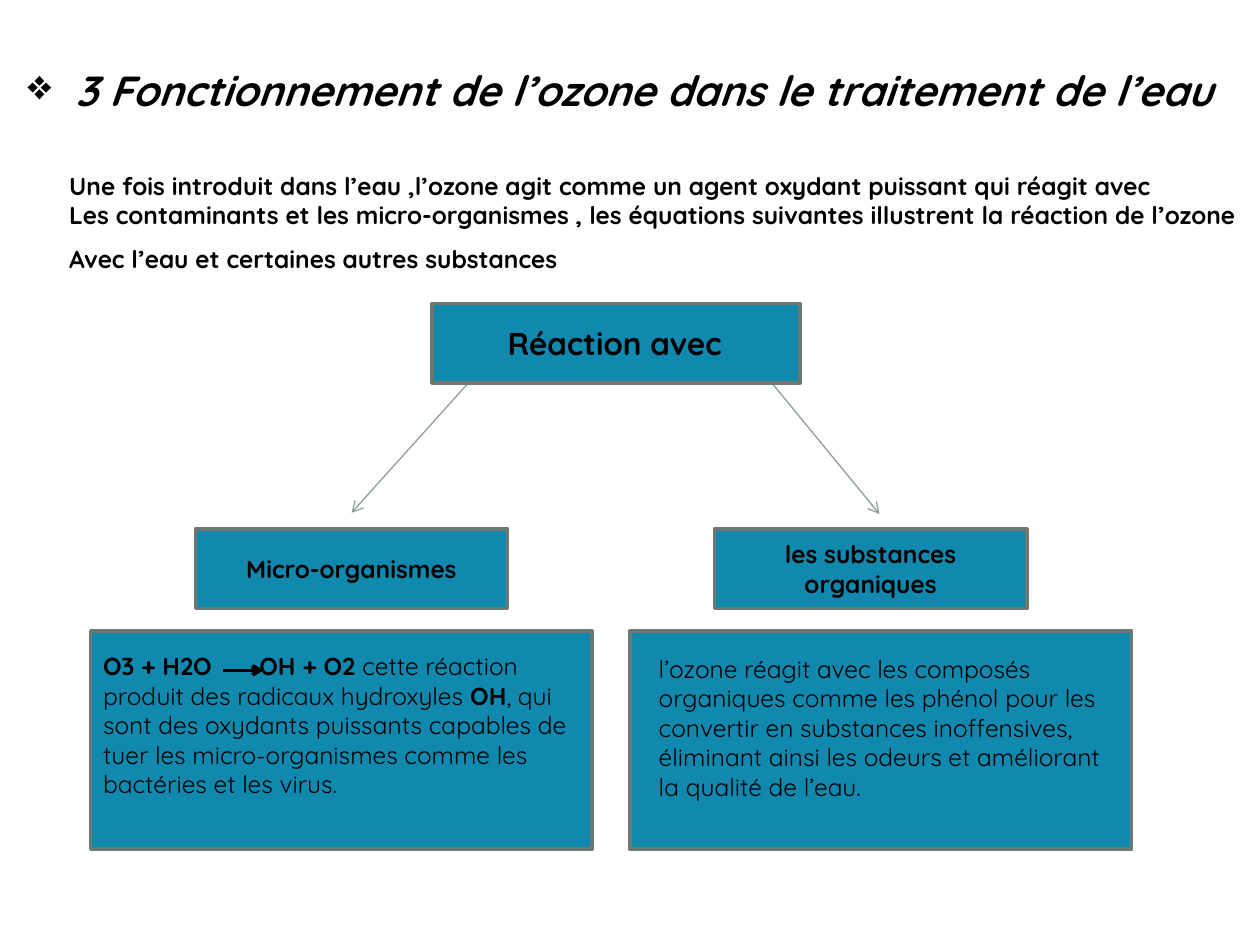
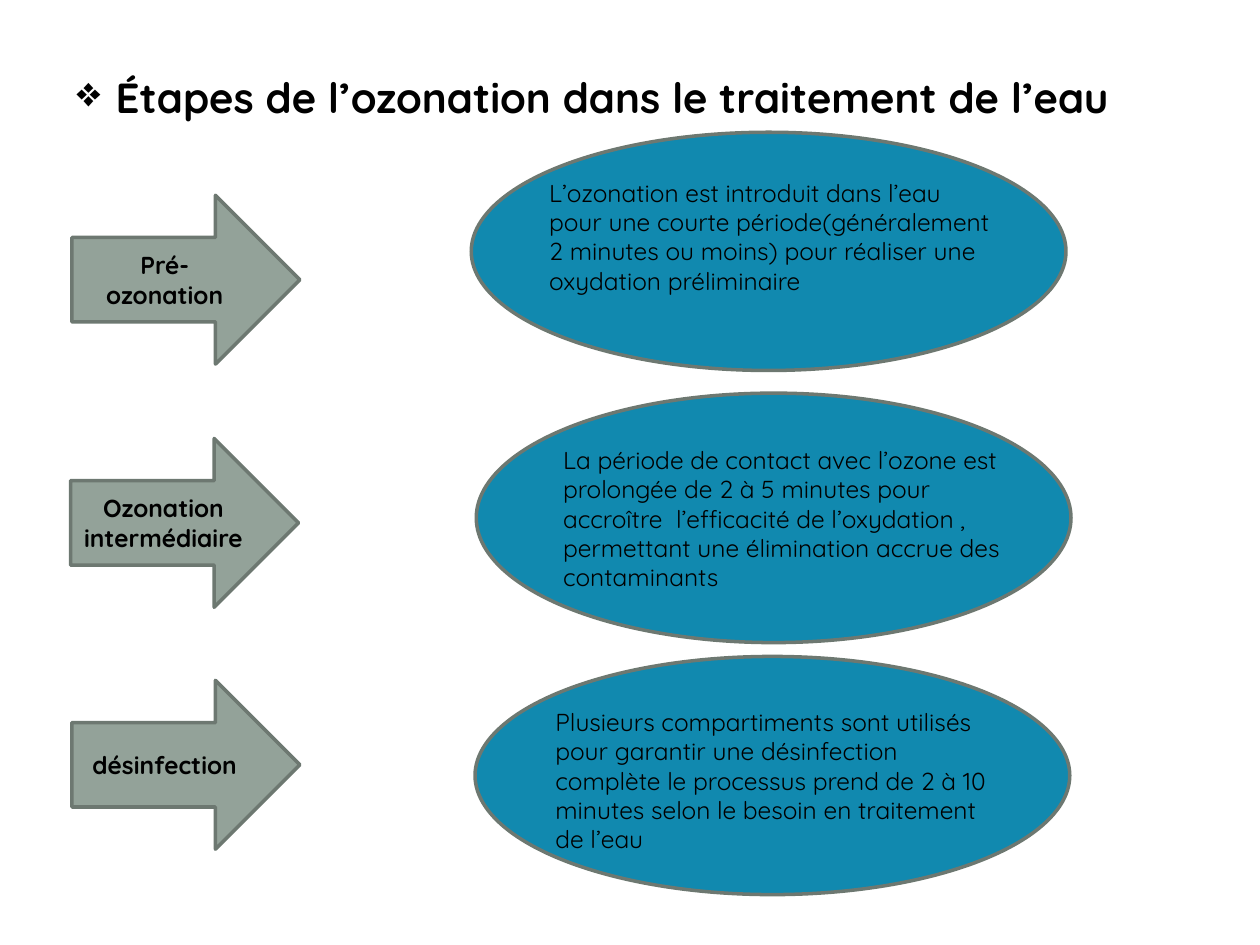
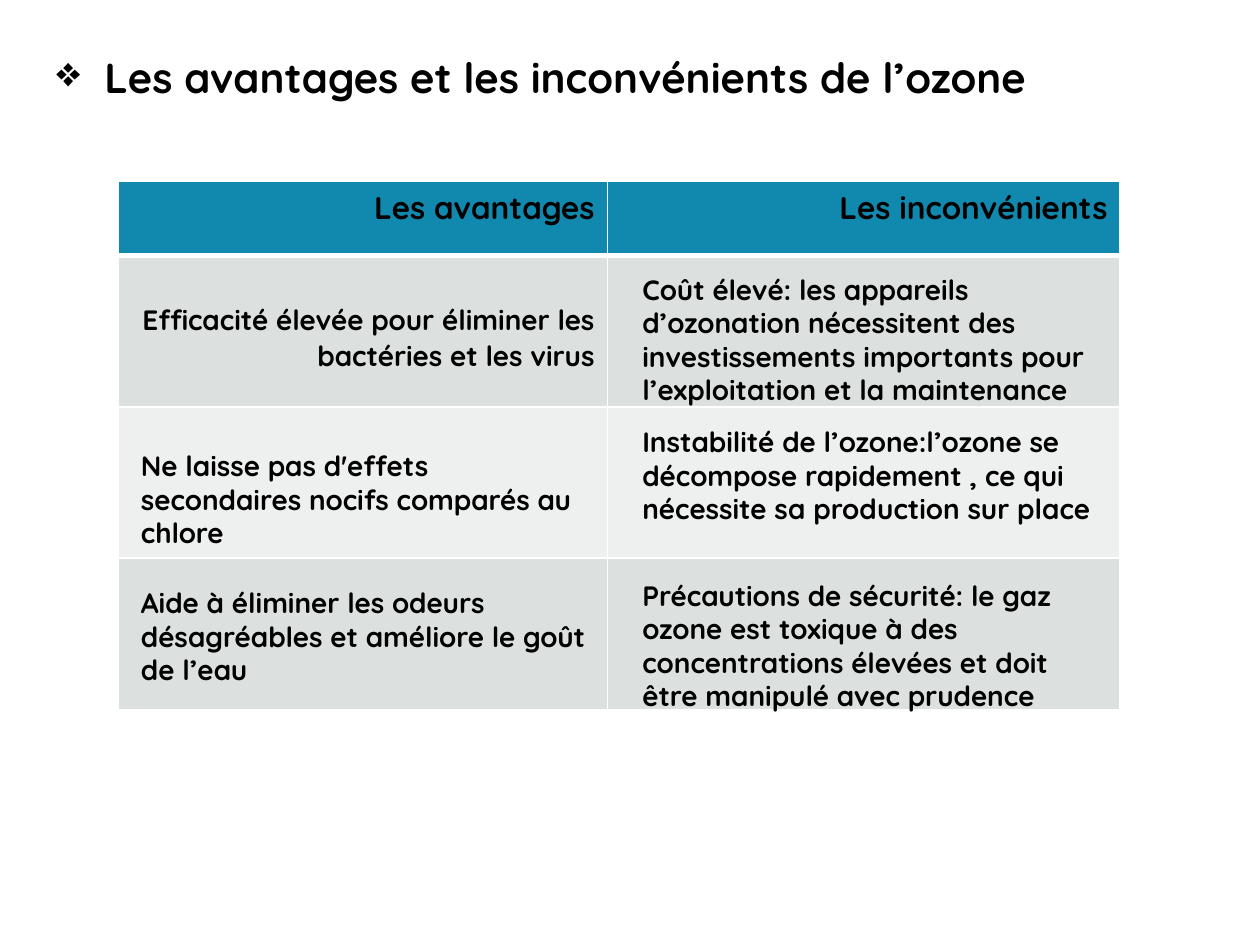
"""Build three slides on ozone in water treatment: reactions, stages, pros and cons."""
from dataclasses import dataclass
from typing import Any

import lxml.etree
import pptx
import pptx.dml.color
import pptx.enum.shapes
import pptx.enum.text
import pptx.oxml.ns
import pptx.util

FONT = "Quicksand"
COLORS = {
    "text": "000000",
    "panel": "1189AF",
    "outline": "6D7871",
    "step": "93A299",
    "branch": "8F9F96",
    "border": "FFFFFF",
    "band_dark": "DCE0DE",
    "band_light": "EEF0EF",
}
SLIDE_WIDTH = pptx.util.Inches(10)
SLIDE_HEIGHT = pptx.util.Inches(7.5)
COLUMN = SLIDE_WIDTH / 100
ROW = SLIDE_HEIGHT / 75

PRESET = pptx.enum.shapes.MSO_SHAPE
ALIGN = pptx.enum.text.PP_ALIGN
ANCHOR = pptx.enum.text.MSO_ANCHOR


@dataclass(frozen=True)
class Area:
    """A rectangle in grid columns and rows."""
    column: float
    row: float
    columns: float
    rows: float

    def emu(self) -> tuple[int, int, int, int]:
        """Return left, top, width and height in EMU."""
        return (round(self.column * COLUMN), round(self.row * ROW),
                round(self.columns * COLUMN), round(self.rows * ROW))


@dataclass(frozen=True)
class Run:
    """A stretch of text with its own weight."""
    text: str
    bold: bool = False


@dataclass(frozen=True)
class Style:
    """The look of a paragraph."""
    size: float = 14
    bold: bool = False
    italic: bool = False
    align: Any = ALIGN.LEFT
    spacing: float | None = None
    hanging: float = 0
    tab: float = 0


@dataclass(frozen=True)
class Arrow:
    """An arrow between two grid points."""
    start: tuple[float, float]
    end: tuple[float, float]
    color: str
    width: float


@dataclass(frozen=True)
class Stage:
    """One ozonation stage: its arrow label and its explanation."""
    name: str
    arrow: Area
    bubble: Area
    note: Area
    explanation: str


BODY = Style()
BOLD = Style(bold=True)
LABEL = Style(bold=True, align=ALIGN.CENTER)
HEADING = Style(size=18, bold=True)
POINT = Style(size=16, bold=True)

INTRO = (
    ("Une fois introduit dans l’eau ,l’ozone agit comme un agent oxydant puissant qui réagit avec", 1.5),
    ("Les contaminants et les micro-organismes , les équations suivantes illustrent la réaction de l’ozone", None),
    ("Avec l’eau et certaines autres substances", 1.5),
)
REACTANTS = (
    ("Micro-organismes", Area(15.5, 42, 24.8, 6.3)),
    ("les substances organiques", Area(56.7, 42, 24.8, 6.3)),
)
REACTION_PANELS = (Area(7.2, 50.1, 39.8, 17.3), Area(50, 50.1, 39.8, 17.3))
BRANCHES = (
    Arrow((37.8, 29.7), (27.9, 40.7), "branch", 0.75),
    Arrow((61.1, 30.2), (69.8, 40.8), "branch", 0.75),
)
EQUATION_ARROW = Arrow((17.7, 53.2), (20.9, 53.2), "text", 2)
HYDROXYL = (
    ((Run("O3 + H2O\tOH + O2 ", True), Run("cette réaction")), Style(tab=12.4)),
    ((Run("produit des radicaux hydroxyles "), Run("OH", True),
      Run(", qui sont des oxydants puissants capables de tuer les micro-organismes "
          "comme les bactéries et les virus.")), BODY),
)
ORGANIC = (
    "l’ozone réagit avec les composés organiques comme les phénol pour les convertir en "
    "substances inoffensives, éliminant ainsi les odeurs et améliorant la qualité de l’eau."
)
STAGES = (
    Stage("Pré-ozonation", Area(5.7, 15.5, 18.1, 13.4),
          Area(37.4, 10.5, 47.2, 18.9), Area(42.6, 13.6, 37.8, 12.8),
          "L’ozonation est introduit dans l’eau pour une courte période(généralement "
          "2 minutes ou moins) pour réaliser une oxydation préliminaire"),
    Stage("Ozonation intermédiaire", Area(5.6, 34.8, 18.1, 13.4),
          Area(37.8, 31.2, 47.2, 19.8), Area(43.7, 34.8, 37.8, 12.8),
          "La période de contact avec l’ozone est prolongée de 2 à 5 minutes pour accroître  "
          "l’efficacité de l’oxydation , permettant une élimination accrue des contaminants"),
    Stage("désinfection", Area(5.7, 54, 18.1, 13.4),
          Area(37.7, 52.1, 47.2, 18.9), Area(43.1, 55.6, 36.7, 12.8),
          "Plusieurs compartiments sont utilisés pour garantir une désinfection complète le "
          "processus prend de 2 à 10 minutes selon le besoin en traitement de l’eau"),
)
COMPARISON = Area(9.4, 14.4, 79.5, 41.9)
COMPARISON_COLUMNS = (38.8, 40.7)
COMPARISON_ROWS = (5.9, 12, 12, 12)
COMPARISON_FILLS = ("panel", "band_dark", "band_light", "band_dark")
COMPARISON_HEADINGS = ("Les avantages", "Les inconvénients")
FIRST_ADVANTAGE = "Efficacité élevée pour éliminer les bactéries et les virus"
POINTS = (
    (Area(10.2, 35.1, 37.8, 9.1), "Ne laisse pas d'effets secondaires nocifs comparés au chlore"),
    (Area(10.2, 46, 37.8, 9.1), "Aide à éliminer les odeurs désagréables et améliore le goût de l’eau"),
    (Area(50, 21.1, 38.6, 11.8),
     "Coût élevé: les appareils d’ozonation nécessitent des investissements importants "
     "pour l’exploitation et la maintenance"),
    (Area(50, 33.2, 38.6, 9.1),
     "Instabilité de l’ozone:l’ozone se décompose rapidement , ce qui nécessite sa production sur place"),
    (Area(50, 45.4, 37.8, 11.8),
     "Précautions de sécurité: le gaz ozone est toxique à des concentrations élevées "
     "et doit être manipulé avec prudence"),
)


def rgb(name: str) -> pptx.dml.color.RGBColor:
    """Look up a named colour."""
    return pptx.dml.color.RGBColor.from_string(COLORS[name])


def add_xml(parent: Any, tag: str, **attributes: str) -> Any:
    """Append a DrawingML child element."""
    child = lxml.etree.SubElement(parent, pptx.oxml.ns.qn(tag))
    for key, value in attributes.items():
        child.set(key, value)
    return child


def fill_paragraph(paragraph: Any, content: str | tuple[Run, ...], style: Style) -> None:
    """Write a paragraph and give it its style."""
    paragraph.alignment = style.align
    if style.spacing:
        paragraph.line_spacing = style.spacing
    properties = paragraph._p.get_or_add_pPr()
    if style.hanging:
        indent = round(style.hanging * COLUMN)
        properties.set("marL", str(indent))
        properties.set("indent", str(-indent))
        add_xml(properties, "a:buChar", char="❖")
    if style.tab:
        stops = add_xml(properties, "a:tabLst")
        add_xml(stops, "a:tab", pos=str(round(style.tab * COLUMN)), algn="l")
    font = paragraph.font
    font.name, font.size = FONT, pptx.util.Pt(style.size)
    font.bold, font.italic = style.bold, style.italic
    font.color.rgb = rgb("text")
    if isinstance(content, str):
        paragraph.add_run().text = content
        return
    for piece in content:
        run = paragraph.add_run()
        run.text, run.font.bold = piece.text, piece.bold


def add_text(slide: Any, area: Area, *paragraphs: tuple[Any, Style], wrap: bool = True) -> None:
    """Add a text box holding the given paragraphs."""
    frame = slide.shapes.add_textbox(*area.emu()).text_frame
    frame.word_wrap = wrap
    frame.auto_size = pptx.enum.text.MSO_AUTO_SIZE.SHAPE_TO_FIT_TEXT
    for index, (content, style) in enumerate(paragraphs):
        paragraph = frame.add_paragraph() if index else frame.paragraphs[0]
        fill_paragraph(paragraph, content, style)


def add_title(slide: Any, area: Area, text: str, hanging: float = 3.8, italic: bool = False) -> None:
    """Add the bulleted slide title."""
    add_text(slide, area, (text, Style(size=24, bold=True, italic=italic, hanging=hanging)))


def add_block(slide: Any, preset: Any, area: Area, fill: str = "panel", label: str = "") -> None:
    """Add an outlined shape with an optional centred label."""
    block = slide.shapes.add_shape(preset, *area.emu())
    block.shadow.inherit = False
    block.fill.solid()
    block.fill.fore_color.rgb = rgb(fill)
    block.line.color.rgb = rgb("outline")
    block.line.width = pptx.util.Pt(2)
    if label:
        block.text_frame.word_wrap = True
        block.text_frame.vertical_anchor = ANCHOR.MIDDLE
        fill_paragraph(block.text_frame.paragraphs[0], label, LABEL)


def add_arrow(slide: Any, arrow: Arrow) -> None:
    """Draw a straight arrow with an open head."""
    (x1, y1), (x2, y2) = arrow.start, arrow.end
    connector = slide.shapes.add_connector(
        pptx.enum.shapes.MSO_CONNECTOR.STRAIGHT,
        round(x1 * COLUMN), round(y1 * ROW), round(x2 * COLUMN), round(y2 * ROW))
    connector.line.color.rgb = rgb(arrow.color)
    connector.line.width = pptx.util.Pt(arrow.width)
    add_xml(connector.line._get_or_add_ln(), "a:tailEnd", type="arrow")
    add_xml(connector._element.spPr, "a:effectLst")


def style_cell(cell: Any, fill: str, bottom: float, top: float) -> None:
    """Give a table cell its borders and fill."""
    properties = cell._tc.get_or_add_tcPr()
    for side, width in (("L", 1), ("R", 1), ("T", top), ("B", bottom)):
        border = add_xml(properties, f"a:ln{side}", w=str(pptx.util.Pt(width)))
        add_xml(add_xml(border, "a:solidFill"), "a:srgbClr", val=COLORS["border"])
    cell.fill.solid()
    cell.fill.fore_color.rgb = rgb(fill)


def add_comparison(slide: Any) -> None:
    """Add the table of advantages and drawbacks."""
    table = slide.shapes.add_table(
        len(COMPARISON_ROWS), len(COMPARISON_COLUMNS), *COMPARISON.emu()).table
    table.first_row = table.horz_banding = False
    for column, width in zip(table.columns, COMPARISON_COLUMNS):
        column.width = round(width * COLUMN)
    for index, (row, height, fill) in enumerate(zip(table.rows, COMPARISON_ROWS, COMPARISON_FILLS)):
        row.height = round(height * ROW)
        for cell in row.cells:
            style_cell(cell, fill, bottom=1 if index else 3, top=3 if index == 1 else 1)
    for cell, heading in zip(table.rows[0].cells, COMPARISON_HEADINGS):
        fill_paragraph(cell.text_frame.paragraphs[0], heading,
                       Style(size=18, bold=True, align=ALIGN.RIGHT))
    advantage = table.cell(1, 0)
    advantage.margin_top = round(3.6 * ROW)
    fill_paragraph(advantage.text_frame.paragraphs[0], FIRST_ADVANTAGE,
                   Style(size=16, bold=True, align=ALIGN.RIGHT, spacing=1.04))


def build_reactions(slide: Any) -> None:
    """Show how ozone reacts with microbes and organic substances."""
    add_title(slide, Area(1.2, 4.6, 101.1, 5),
              "3 Fonctionnement de l’ozone dans le traitement de l’eau", italic=True)
    add_text(slide, Area(4.5, 11.9, 95.5, 10.4),
             *((text, Style(bold=True, spacing=spacing)) for text, spacing in INTRO), wrap=False)
    for branch in BRANCHES:
        add_arrow(slide, branch)
    for panel in REACTION_PANELS:
        add_block(slide, PRESET.RECTANGLE, panel)
    add_block(slide, PRESET.RECTANGLE, Area(34.3, 24.1, 29.2, 6.3))
    add_text(slide, Area(39.3, 25.2, 20.9, 4), ("Réaction avec", HEADING))
    for name, area in REACTANTS:
        add_block(slide, PRESET.RECTANGLE, area, label=name)
    add_text(slide, Area(7.2, 51.2, 39.8, 12.8), *HYDROXYL)
    add_arrow(slide, EQUATION_ARROW)
    add_text(slide, Area(51.3, 51.4, 38.6, 12.8), (ORGANIC, BODY))


def build_stages(slide: Any) -> None:
    """Show the three ozonation stages."""
    add_title(slide, Area(5.1, 5.2, 89.8, 5),
              "Étapes de l’ozonation dans le traitement de l’eau", hanging=3.1)
    for stage in STAGES:
        add_block(slide, PRESET.RIGHT_ARROW, stage.arrow, "step", stage.name)
        add_block(slide, PRESET.OVAL, stage.bubble)
        add_text(slide, stage.note, (stage.explanation, BODY))


def build_comparison(slide: Any) -> None:
    """Compare the advantages and drawbacks of ozone."""
    add_title(slide, Area(3.5, 3.6, 85, 5), "Les avantages et les inconvénients de l’ozone")
    add_comparison(slide)
    for area, text in POINTS:
        add_text(slide, area, (text, POINT))


def main() -> None:
    """Build and save the presentation."""
    presentation = pptx.Presentation()
    presentation.slide_width, presentation.slide_height = SLIDE_WIDTH, SLIDE_HEIGHT
    blank = presentation.slide_layouts[6]
    for build in (build_reactions, build_stages, build_comparison):
        build(presentation.slides.add_slide(blank))
    presentation.save("out.pptx")


if __name__ == "__main__":
    main()
